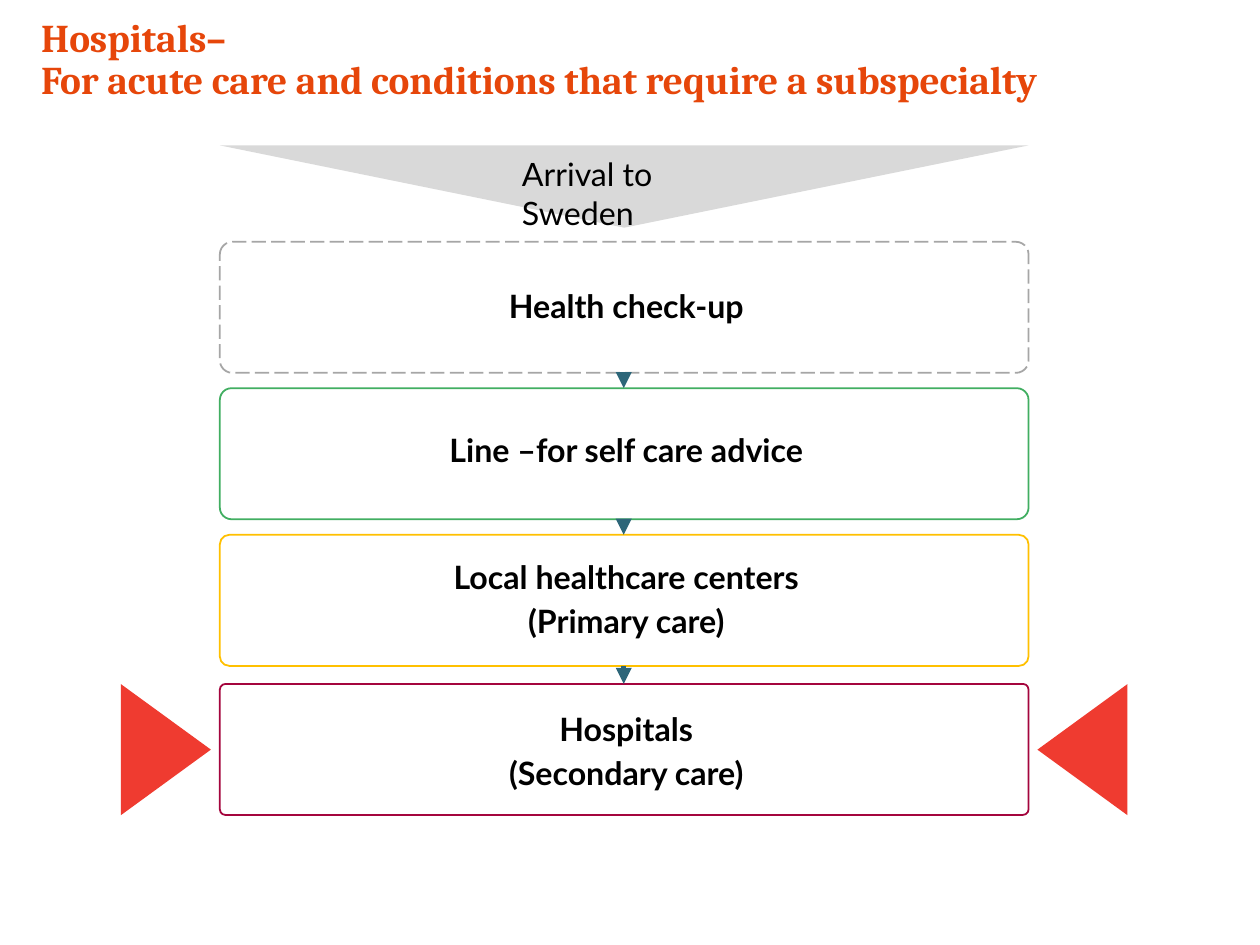
from dataclasses import dataclass
from typing import Optional

from lxml.etree import SubElement
from pptx import Presentation
from pptx.dml.color import RGBColor
from pptx.enum.dml import MSO_LINE
from pptx.enum.shapes import MSO_CONNECTOR, MSO_SHAPE
from pptx.enum.text import MSO_ANCHOR, PP_ALIGN
from pptx.oxml.ns import qn
from pptx.slide import Slide
from pptx.text.text import _Paragraph
from pptx.util import Pt


@dataclass(frozen=True)
class Theme:
    heading_font: str = "Cambria"
    body_font: str = "Lato"
    heading_size: float = 22
    body_size: float = 18
    heading: str = "E6460A"
    ink: str = "000000"
    arrival: str = "D9D9D9"
    check_up: str = "A6A6A6"
    self_care: str = "41AE61"
    primary: str = "FFC000"
    secondary: str = "A4053D"
    arrow: str = "2D6679"
    highlight: str = "EF3B30"


@dataclass(frozen=True)
class Box:
    left: float
    top: float
    width: float
    height: float


@dataclass(frozen=True)
class CareStep:
    lines: tuple[str, ...]
    top: float
    label_top: float
    corner: float
    color: str
    dash: Optional[MSO_LINE] = None


@dataclass(frozen=True)
class Pointer:
    box: Box
    rotation: float
    color: str


THEME = Theme()
STEP_LEFT, STEP_WIDTH, STEP_HEIGHT = 123.1, 452.9, 73.4
ARROW_X = 349.3
LABEL_LEFT, LABEL_WIDTH, LABEL_HEIGHT = 250.6, 200.2, 28.8

STEPS = (
    CareStep(("Health check-up",), 135.4, 157, 0.096, THEME.check_up, MSO_LINE.LONG_DASH),
    CareStep(("Line –for self care advice",), 217.4, 237.6, 0.089, THEME.self_care),
    CareStep(("Local healthcare centers", "(Primary care)"), 299.5, 321.1, 0.073, THEME.primary),
    CareStep(("Hospitals", "(Secondary care)"), 383, 406.1, 0.043, THEME.secondary),
)
ARRIVAL = Pointer(Box(STEP_LEFT, 81.4, STEP_WIDTH, 46.1), 180, THEME.arrival)
HOSPITAL_POINTERS = (
    Pointer(Box(56.2, 394.6, STEP_HEIGHT, 50.4), 90, THEME.highlight),
    Pointer(Box(569.5, 394.6, STEP_HEIGHT, 50.4), 270, THEME.highlight),
)


def place(box: Box) -> tuple[Pt, Pt, Pt, Pt]:
    return Pt(box.left), Pt(box.top), Pt(box.width), Pt(box.height)


def add_run(paragraph: _Paragraph, text: str, font: str, size: float, color: str, bold: bool) -> None:
    run = paragraph.add_run()
    run.text = text
    run.font.name = font
    run.font.size = Pt(size)
    run.font.bold = bold
    run.font.color.rgb = RGBColor.from_string(color)


def add_frame(slide: Slide, box: Box, anchor: MSO_ANCHOR):
    frame = slide.shapes.add_textbox(*place(box)).text_frame
    frame.word_wrap = True
    frame.vertical_anchor = anchor
    frame.margin_left = frame.margin_right = frame.margin_top = frame.margin_bottom = Pt(0)
    return frame


def add_heading(slide: Slide, lines: tuple[str, ...]) -> None:
    frame = add_frame(slide, Box(23, 9.4, 668.2, 48.2), MSO_ANCHOR.BOTTOM)
    paragraph = frame.paragraphs[0]
    paragraph.line_spacing = Pt(24)
    for index, line in enumerate(lines):
        if index:
            paragraph.add_line_break()
        add_run(paragraph, line, THEME.heading_font, THEME.heading_size, THEME.heading, True)


def add_label(slide: Slide, box: Box, lines: tuple[str, ...], anchor: MSO_ANCHOR,
              align: PP_ALIGN, bold: bool) -> None:
    frame = add_frame(slide, box, anchor)
    for index, line in enumerate(lines):
        paragraph = frame.add_paragraph() if index else frame.paragraphs[0]
        paragraph.alignment = align
        paragraph.space_after = Pt(3)
        add_run(paragraph, line, THEME.body_font, THEME.body_size, THEME.ink, bold)


def add_pointer(slide: Slide, pointer: Pointer) -> None:
    triangle = slide.shapes.add_shape(MSO_SHAPE.ISOSCELES_TRIANGLE, *place(pointer.box))
    triangle.shadow.inherit = False
    triangle.rotation = pointer.rotation
    triangle.fill.solid()
    triangle.fill.fore_color.rgb = RGBColor.from_string(pointer.color)
    triangle.line.fill.background()


def add_step(slide: Slide, step: CareStep) -> None:
    box = Box(STEP_LEFT, step.top, STEP_WIDTH, STEP_HEIGHT)
    outline = slide.shapes.add_shape(MSO_SHAPE.ROUNDED_RECTANGLE, *place(box))
    outline.shadow.inherit = False
    outline.adjustments[0] = step.corner
    outline.fill.background()
    outline.line.color.rgb = RGBColor.from_string(step.color)
    outline.line.width = Pt(1)
    if step.dash is not None:
        outline.line.dash_style = step.dash


def add_arrow(slide: Slide, start: float, end: float) -> None:
    arrow = slide.shapes.add_connector(
        MSO_CONNECTOR.STRAIGHT, Pt(ARROW_X), Pt(start), Pt(ARROW_X), Pt(end))
    arrow.line.color.rgb = RGBColor.from_string(THEME.arrow)
    arrow.line.width = Pt(3)
    SubElement(arrow.line._get_or_add_ln(), qn("a:tailEnd"), type="triangle")
    SubElement(arrow._element.spPr, qn("a:effectLst"))


def main() -> None:
    presentation = Presentation()
    presentation.slide_width = Pt(705.6)
    presentation.slide_height = Pt(529.2)
    slide = presentation.slides.add_slide(presentation.slide_layouts[6])

    add_pointer(slide, ARRIVAL)
    add_heading(slide, ("Hospitals–", "For acute care and conditions that require a subspecialty"))
    for step in STEPS:
        add_step(slide, step)
    for upper, lower in zip(STEPS, STEPS[1:]):
        add_arrow(slide, upper.top + STEP_HEIGHT, lower.top)
    for pointer in HOSPITAL_POINTERS:
        add_pointer(slide, pointer)
    add_label(slide, Box(292.3, 86.4, 137.5, 27.4), ("Arrival to Sweden",),
              MSO_ANCHOR.TOP, PP_ALIGN.LEFT, False)
    for step in STEPS:
        box = Box(LABEL_LEFT, step.label_top, LABEL_WIDTH, LABEL_HEIGHT)
        add_label(slide, box, step.lines, MSO_ANCHOR.MIDDLE, PP_ALIGN.CENTER, True)

    presentation.save("out.pptx")


if __name__ == "__main__":
    main()
